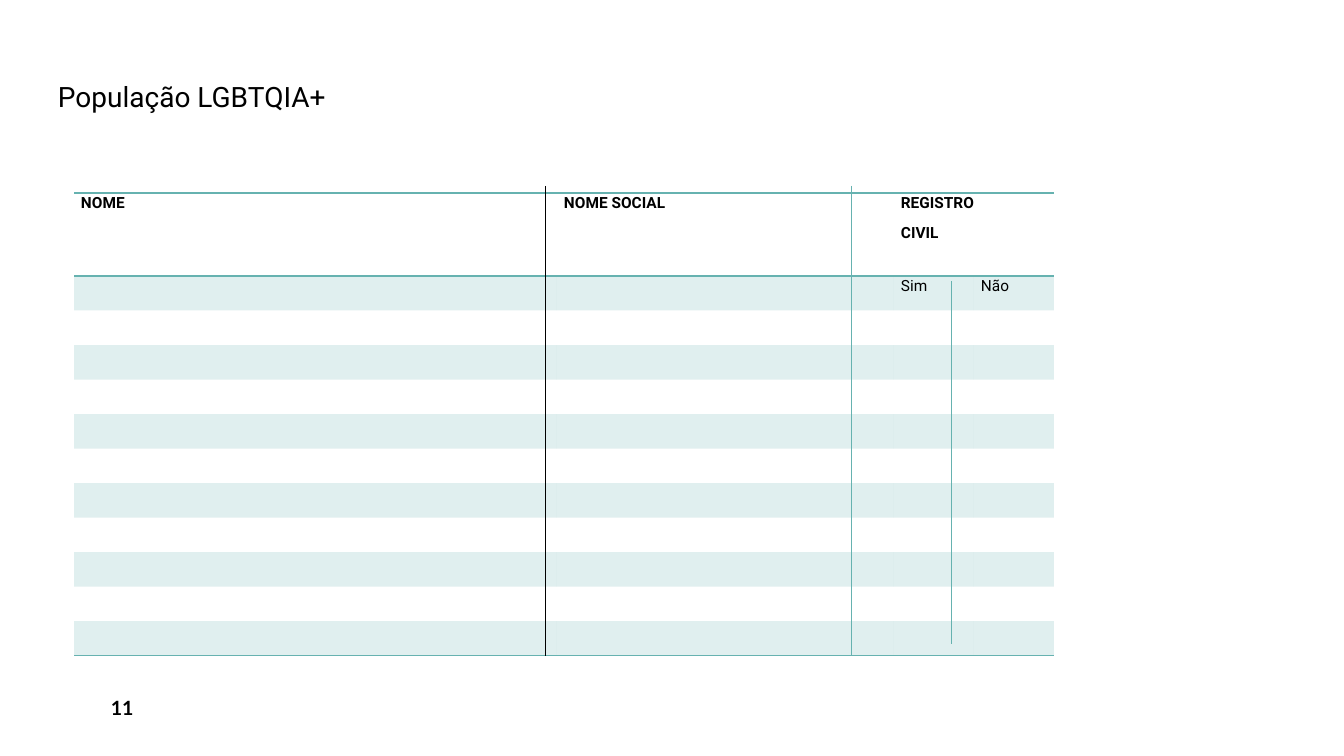
from dataclasses import dataclass

from lxml.etree import SubElement
from pptx import Presentation
from pptx.dml.color import RGBColor
from pptx.enum.shapes import MSO_CONNECTOR
from pptx.enum.text import MSO_ANCHOR
from pptx.oxml import parse_xml
from pptx.oxml.ns import nsdecls, qn
from pptx.slide import Slide
from pptx.table import Table, _Cell
from pptx.text.text import TextFrame, _Paragraph
from pptx.util import Emu, Pt

BLACK = RGBColor(0x00, 0x00, 0x00)
TEAL = RGBColor(0x66, 0xB2, 0xB0)
PLAIN_STYLE = "{2D5ABB26-0587-4C30-8999-92F81FD0307C}"
COLUMN_WIDTHS = (483, 337, 80, 80)
HEADER_HEIGHT = 83
BODY_HEIGHT = 380
BODY_ROWS = 11


@dataclass(frozen=True)
class Label:
    """Text of one table cell, one string per paragraph."""

    row: int
    column: int
    lines: tuple[str, ...]
    bold: bool


@dataclass(frozen=True)
class Divider:
    """A vertical line between columns, in px."""

    x: int
    top: int
    bottom: int
    color: RGBColor


LABELS = (
    Label(0, 0, ("NOME",), True),
    Label(0, 1, ("NOME SOCIAL",), True),
    Label(0, 2, ("REGISTRO", "CIVIL"), True),
    Label(1, 2, ("Sim",), False),
    Label(1, 3, ("Não",), False),
)
DIVIDERS = (
    Divider(545, 186, 656, BLACK),
    Divider(851, 186, 656, TEAL),
    Divider(951, 281, 644, TEAL),
)


def px(length: int) -> Emu:
    """Turn px into EMU at 100.8 px to the inch."""
    return Emu(round(length * 914400 / 100.8))


def add_span(para: _Paragraph, text: str, font: str, size: int, bold: bool) -> None:
    """Add one black run to a paragraph."""
    span = para.add_run()
    span.text = text
    span.font.name = font
    span.font.size = Pt(size)
    span.font.bold = bold
    span.font.color.rgb = BLACK


def add_box(page: Slide, left: int, top: int, width: int, height: int) -> TextFrame:
    """Add a wrapping text box and return its frame."""
    frame = page.shapes.add_textbox(px(left), px(top), px(width), px(height)).text_frame
    frame.word_wrap = True
    return frame


def add_border(cell: _Cell, side: str) -> None:
    """Draw a thin teal border on one side of a cell."""
    properties = cell._tc.get_or_add_tcPr()
    border = parse_xml(
        f'<a:{side} {nsdecls("a")} w="12700"><a:solidFill>'
        f'<a:srgbClr val="{TEAL}"/></a:solidFill></a:{side}>'
    )
    properties.insert(len(properties.findall(qn("a:lnT"))), border)


def style_cell(cell: _Cell, row: int) -> None:
    """Set the margins, band fill and borders of a cell."""
    cell.margin_left = cell.margin_right = px(7)
    cell.margin_top = cell.margin_bottom = 0
    if row % 2:
        cell.fill.solid()
        cell.fill.fore_color.rgb = TEAL
        color = cell._tc.tcPr.find(f".//{qn('a:srgbClr')}")
        SubElement(color, qn("a:alpha"), val="20000")
    else:
        cell.fill.background()
    if row == 0:
        add_border(cell, "lnT")
    if row in (0, BODY_ROWS):
        add_border(cell, "lnB")


def write_label(table: Table, label: Label) -> None:
    """Write a label into its cell."""
    frame = table.cell(label.row, label.column).text_frame
    for index, line in enumerate(label.lines):
        para = frame.add_paragraph() if index else frame.paragraphs[0]
        para.line_spacing = 1.07
        para.space_after = Pt(8)
        add_span(para, line, "Roboto", 11, label.bold)


def add_register(page: Slide) -> None:
    """Add the banded table of names."""
    graphic = page.shapes.add_table(
        BODY_ROWS + 1, len(COLUMN_WIDTHS), px(74), px(193),
        px(sum(COLUMN_WIDTHS)), px(HEADER_HEIGHT + BODY_HEIGHT),
    )
    table = graphic.table
    table.first_row = table.horz_banding = False
    table._tbl.tblPr.find(qn("a:tableStyleId")).text = PLAIN_STYLE
    for column, width in zip(table.columns, COLUMN_WIDTHS):
        column.width = px(width)
    for index, row in enumerate(table.rows):
        row.height = Emu(px(BODY_HEIGHT) // BODY_ROWS) if index else px(HEADER_HEIGHT)
        for cell in row.cells:
            style_cell(cell, index)
    table.cell(0, 2).merge(table.cell(0, 3))
    for label in LABELS:
        write_label(table, label)


def add_divider(page: Slide, divider: Divider) -> None:
    """Draw one vertical line without a shadow."""
    line = page.shapes.add_connector(
        MSO_CONNECTOR.STRAIGHT,
        px(divider.x), px(divider.top), px(divider.x), px(divider.bottom),
    )
    line.line.color.rgb = divider.color
    line.line.width = Pt(0.5)
    SubElement(line._element.spPr, qn("a:effectLst"))


def main() -> None:
    """Build the slide and save it."""
    deck = Presentation()
    deck.slide_width, deck.slide_height = px(1344), px(756)
    page = deck.slides.add_slide(deck.slide_layouts[6])

    number = add_box(page, 101, 688, 294, 40)
    number.vertical_anchor = MSO_ANCHOR.MIDDLE
    add_span(number.paragraphs[0], "11", "Lato", 14, True)

    add_register(page)

    title = add_box(page, 48, 75, 1015, 598).paragraphs[0]
    title.line_spacing = Pt(24)
    title.space_after = Pt(12)
    add_span(title, "População LGBTQIA+", "Roboto", 20, False)

    for divider in DIVIDERS:
        add_divider(page, divider)
    deck.save("out.pptx")


if __name__ == "__main__":
    main()
